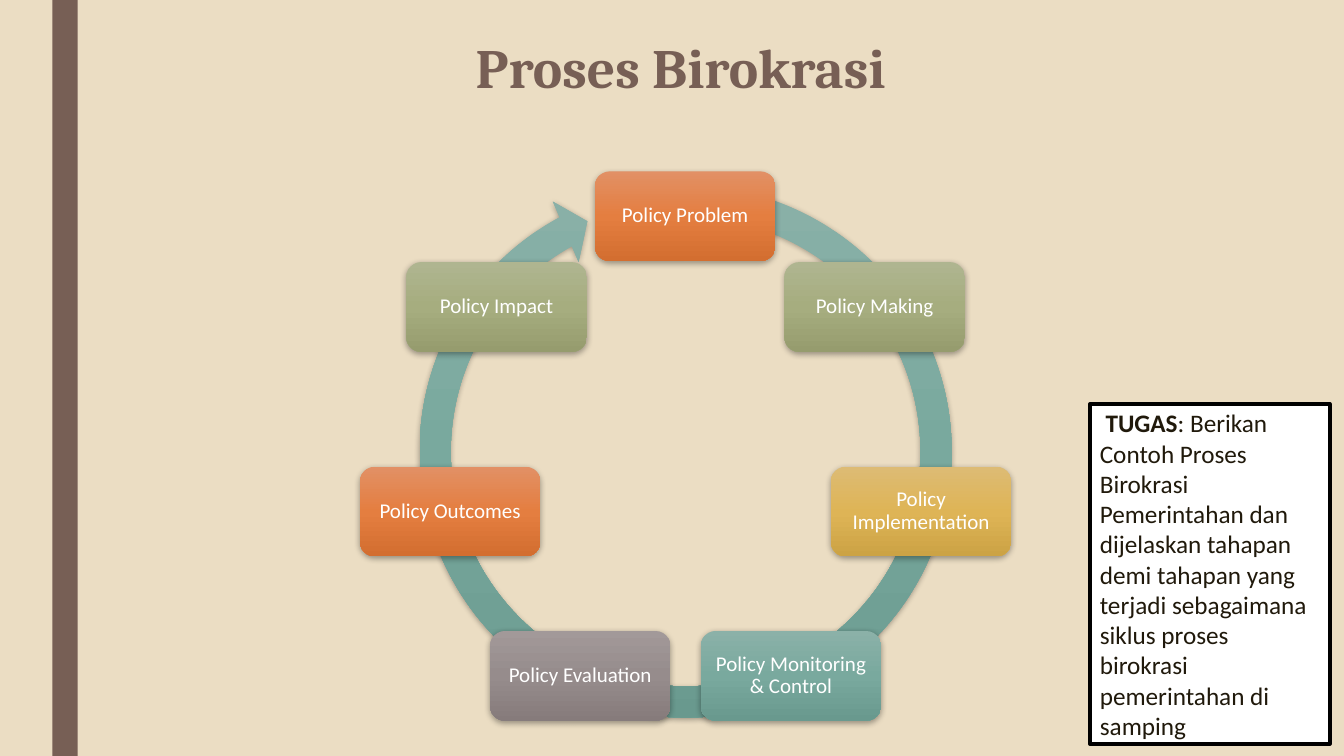
"""Build the slide that shows the bureaucracy process as a ring of seven steps."""
import copy
import math
from dataclasses import dataclass

import pptx
import pptx.dml.color
import pptx.enum.shapes
import pptx.enum.text
import pptx.oxml
import pptx.oxml.ns
import pptx.util

RGB = pptx.dml.color.RGBColor
KIND = pptx.enum.shapes.MSO_SHAPE
ALIGN = pptx.enum.text.PP_ALIGN
MIDDLE = pptx.enum.text.MSO_ANCHOR.MIDDLE

SCALE = 9144
SAND = RGB(0xEB, 0xDD, 0xC3)
BROWN = RGB(0x77, 0x5F, 0x55)
WHITE = RGB(0xFF, 0xFF, 0xFF)
BLACK = RGB(0, 0, 0)
INK = RGB(0x20, 0x19, 0x0B)
ORANGE = (RGB(0xE2, 0x90, 0x65), RGB(0xE4, 0x7E, 0x40), RGB(0xD3, 0x6E, 0x30))
OLIVE = (RGB(0xAF, 0xB5, 0x90), RGB(0xA6, 0xAD, 0x7F), RGB(0x96, 0x9C, 0x6E))
GOLD = (RGB(0xDD, 0xBB, 0x74), RGB(0xDE, 0xB4, 0x56), RGB(0xCC, 0xA3, 0x45))
TEAL = (RGB(0x8B, 0xB1, 0xA8), RGB(0x79, 0xA9, 0x9E), RGB(0x69, 0x99, 0x8E))
GREY = (RGB(0xA2, 0x99, 0x99), RGB(0x96, 0x8C, 0x8C), RGB(0x86, 0x7B, 0x7B))

HUB_X, HUB_Y, RADIUS = 680, 454, 240
STEP_W, STEP_H = 179, 89
SHADOW = (
    f'<a:outerShdw {pptx.oxml.ns.nsdecls("a")} blurRad="57150" dist="19050" '
    'dir="5400000" algn="ctr" rotWithShape="0"><a:srgbClr val="000000">'
    '<a:alpha val="35000"/></a:srgbClr></a:outerShdw>'
)


@dataclass(frozen=True)
class Step:
    label: str
    shades: tuple[RGB, RGB, RGB]


STEPS = [
    Step("Policy Problem", ORANGE),
    Step("Policy Making", OLIVE),
    Step("Policy Implementation", GOLD),
    Step("Policy Monitoring & Control", TEAL),
    Step("Policy Evaluation", GREY),
    Step("Policy Outcomes", ORANGE),
    Step("Policy Impact", OLIVE),
]


def px(size: float) -> pptx.util.Emu:
    return pptx.util.Emu(round(size) * SCALE)


def write(frame, text: str, *, size: float, color: RGB, font: str = "Calibri",
          bold: bool = False, align=ALIGN.CENTER, spacing: float = 1.0) -> None:
    frame.word_wrap = True
    frame.vertical_anchor = MIDDLE
    line = frame.paragraphs[0]
    line.alignment = align
    line.line_spacing = spacing
    run = line.add_run()
    run.text = text
    run.font.name = font
    run.font.size = pptx.util.Pt(size)
    run.font.bold = bold
    run.font.color.rgb = color


def add_box(slide, kind, left: float, top: float, width: float, height: float):
    shape = slide.shapes.add_shape(kind, px(left), px(top), px(width), px(height))
    shape.shadow.inherit = False
    shape.line.fill.background()
    return shape


def shade(shape, colors: tuple[RGB, RGB, RGB]) -> None:
    shape.fill.gradient()
    shape.fill.gradient_angle = 270
    props = shape._element.spPr
    stops = props.find(".//" + pptx.oxml.ns.qn("a:gsLst"))
    stops.append(copy.deepcopy(stops[0]))
    for stop, color, place in zip(shape.fill.gradient_stops, colors, (0, 0.5, 1)):
        stop.color.rgb = color
        stop.position = place
    effects = props.find(pptx.oxml.ns.qn("a:effectLst"))
    effects.append(pptx.oxml.parse_xml(SHADOW))


def draw_title(slide) -> None:
    title = slide.shapes.title
    title.left, title.top, title.width, title.height = map(px, (150, 40, 1050, 60))
    write(title.text_frame, "Proses Birokrasi", size=39.6, color=BROWN,
          font="Cambria", bold=True, spacing=0.89)


def draw_ring(slide) -> None:
    arrow = add_box(slide, KIND.CIRCULAR_ARROW, 399, 167, 562, 562)
    for index, value in enumerate((0.055, 3.307, 144.837, 169.686, 0.058)):
        arrow.adjustments[index] = value
    shade(arrow, TEAL)
    for index, step in enumerate(STEPS):
        angle = math.tau * index / len(STEPS)
        left = HUB_X + RADIUS * math.sin(angle) - STEP_W / 2
        top = HUB_Y - RADIUS * math.cos(angle) - STEP_H / 2
        box = add_box(slide, KIND.ROUNDED_RECTANGLE, left, top, STEP_W, STEP_H)
        shade(box, step.shades)
        frame = box.text_frame
        frame.margin_left = frame.margin_right = px(8)
        write(frame, step.label, size=15, color=WHITE, spacing=0.9)


def draw_task(slide) -> None:
    note = add_box(slide, KIND.RECTANGLE, 1081, 401, 238, 337)
    note.fill.solid()
    note.fill.fore_color.rgb = WHITE
    note.line.color.rgb = BLACK
    note.line.width = pptx.util.Pt(2.75)
    parts = (
        (" ", False),
        ("TUGAS", True),
        (": Berikan Contoh Proses Birokrasi Pemerintahan dan dijelaskan tahapan "
         "demi tahapan yang terjadi sebagaimana siklus proses birokrasi "
         "pemerintahan di samping", False),
    )
    for text, bold in parts:
        write(note.text_frame, text, size=18, color=INK, bold=bold, align=ALIGN.LEFT)


def main() -> None:
    deck = pptx.Presentation()
    deck.slide_width, deck.slide_height = px(1333), px(750)
    slide = deck.slides.add_slide(deck.slide_layouts[5])
    slide.background.fill.solid()
    slide.background.fill.fore_color.rgb = SAND
    bar = add_box(slide, KIND.RECTANGLE, 52, 0, 25, 750)
    bar.fill.solid()
    bar.fill.fore_color.rgb = BROWN
    draw_title(slide)
    draw_ring(slide)
    draw_task(slide)
    deck.save("out.pptx")


if __name__ == "__main__":
    main()
